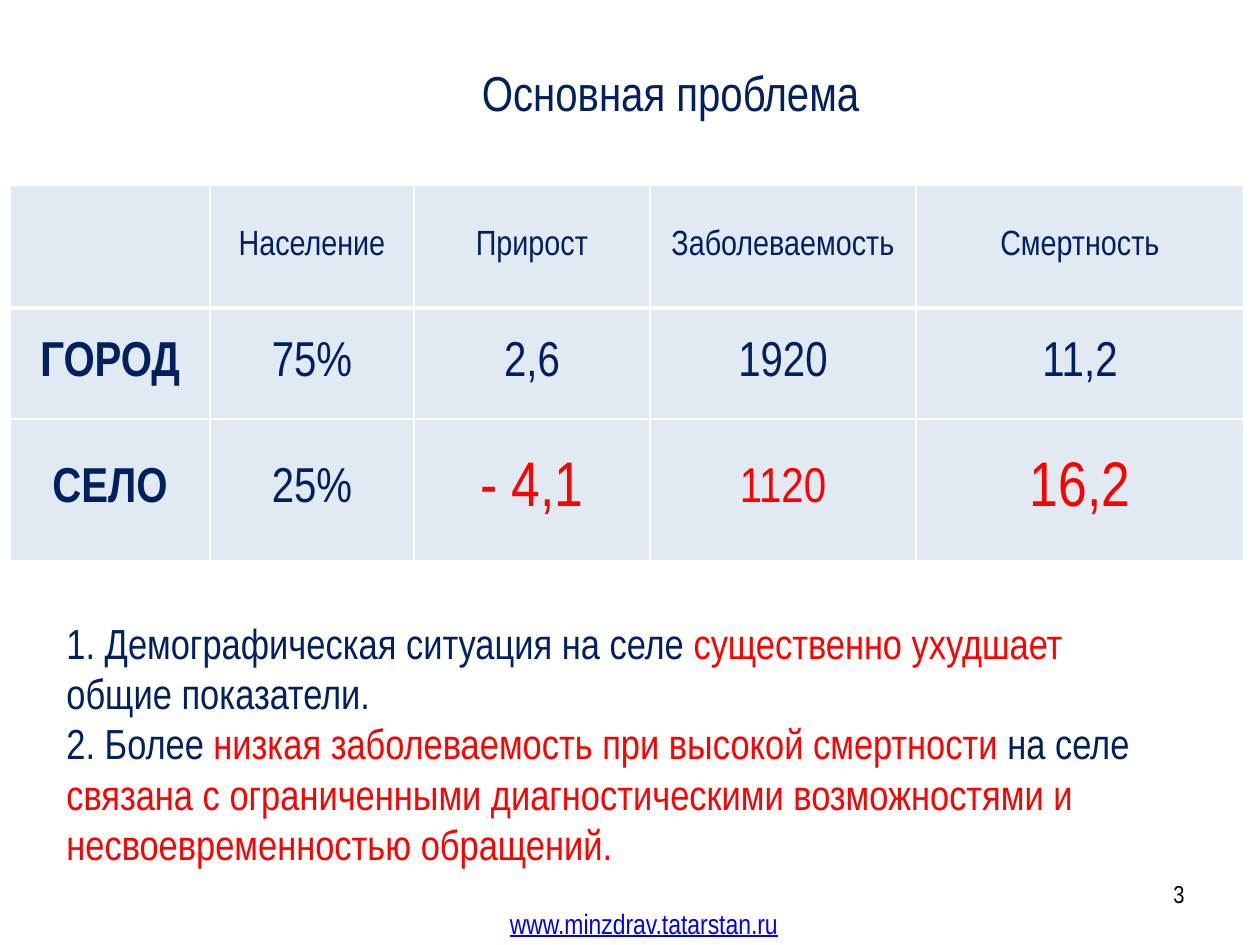
import pptx
import pptx.dml.color
import pptx.enum.text
import pptx.oxml
import pptx.oxml.ns
import pptx.util

PX = 914400 / 126
FONT = "Arial Narrow"
NAVY = pptx.dml.color.RGBColor(0x00, 0x20, 0x60)
RED = pptx.dml.color.RGBColor(0xFF, 0x00, 0x00)
BLACK = pptx.dml.color.RGBColor(0x00, 0x00, 0x00)
LINK_BLUE = pptx.dml.color.RGBColor(0x00, 0x00, 0xFF)
CELL_BLUE = pptx.dml.color.RGBColor(0xDC, 0xE6, 0xF2)
WHITE = pptx.dml.color.RGBColor(0xFF, 0xFF, 0xFF)
CELL_OPACITY = 85
ALIGN = pptx.enum.text.PP_ALIGN
MIDDLE = pptx.enum.text.MSO_ANCHOR.MIDDLE
TOP = pptx.enum.text.MSO_ANCHOR.TOP

TITLE = "Основная проблема"
ROWS = [
    ["", "Население", "Прирост", "Заболеваемость", "Смертность"],
    ["ГОРОД", "75%", "2,6", "1920", "11,2"],
    ["СЕЛО", "25%", "- 4,1", "1120", "16,2"],
]
COLUMN_WIDTHS = [200, 204, 236, 266, 328]
ROW_HEIGHTS = [123, 111, 142]
HIGHLIGHTS = {"- 4,1": 36, "1120": 28, "16,2": 36}
CONCLUSIONS = [
    [("1. Демографическая ситуация на селе ", NAVY),
     ("существенно ухудшает", RED),
     (" общие показатели.", NAVY)],
    [("2. Более ", NAVY),
     ("низкая заболеваемость при высокой смертности ", RED),
     ("на селе ", NAVY),
     ("связана с ограниченными диагностическими возможностями "
      "и несвоевременностью обращений.", RED)],
]
PAGE_NUMBER = "3"
ADDRESS = "www.minzdrav.tatarstan.ru"


def px(*lengths):
    return [pptx.util.Emu(round(length * PX)) for length in lengths]


def write(frame, paragraphs, size, align, anchor=MIDDLE, bold=False):
    """Fill a text frame with paragraphs, each a list of (text, colour)."""
    frame.word_wrap = True
    frame.vertical_anchor = anchor
    for index, spans in enumerate(paragraphs):
        para = frame.paragraphs[0] if index == 0 else frame.add_paragraph()
        para.alignment = align
        for text, colour in spans:
            span = para.add_run()
            span.text = text
            span.font.name = FONT
            span.font.size = pptx.util.Pt(size)
            span.font.bold = bold
            span.font.color.rgb = colour


def add_text(page, place, *content, **options):
    box = page.shapes.add_textbox(*px(*place))
    write(box.text_frame, *content, **options)
    return box


def style_cell(cell, border_widths):
    """Add borders (points per side) and a translucent fill."""
    properties = cell._tc.get_or_add_tcPr()
    for side, width in border_widths.items():
        properties.append(pptx.oxml.parse_xml(
            f'<a:ln{side} {pptx.oxml.ns.nsdecls("a")} w="{pptx.util.Pt(width)}">'
            f'<a:solidFill><a:srgbClr val="{WHITE}"/></a:solidFill></a:ln{side}>'))
    cell.fill.solid()
    cell.fill.fore_color.rgb = CELL_BLUE
    colour = properties.find(pptx.oxml.ns.qn("a:solidFill"))[0]
    colour.append(pptx.oxml.parse_xml(
        f'<a:alpha {pptx.oxml.ns.nsdecls("a")} val="{CELL_OPACITY * 1000}"/>'))


def add_indicators(page):
    place = px(10, 185, sum(COLUMN_WIDTHS), sum(ROW_HEIGHTS))
    table = page.shapes.add_table(len(ROWS), len(COLUMN_WIDTHS), *place).table
    for column, width in zip(table.columns, px(*COLUMN_WIDTHS)):
        column.width = width
    for row, height in zip(table.rows, px(*ROW_HEIGHTS)):
        row.height = height
    for r, texts in enumerate(ROWS):
        for c, text in enumerate(texts):
            cell = table.cell(r, c)
            style_cell(cell, {"L": 1, "R": 1, "T": 3 if r == 1 else 1,
                              "B": 3 if r == 0 else 1})
            cell.vertical_anchor = MIDDLE
            if text:
                size = HIGHLIGHTS.get(text, 20 if r == 0 else 28)
                colour = RED if text in HIGHLIGHTS else NAVY
                write(cell.text_frame, [[(text, colour)]], size, ALIGN.CENTER,
                      bold=c == 0)


def main():
    deck = pptx.Presentation()
    deck.slide_width, deck.slide_height = px(1260, 945)
    page = deck.slides.add_slide(deck.slide_layouts[5])

    title = page.shapes.title
    title.left, title.top, title.width, title.height = px(155, 19, 1031, 146)
    write(title.text_frame, [[(TITLE, NAVY)]], 28, ALIGN.CENTER)

    add_indicators(page)
    add_text(page, (54, 611, 1131, 267), CONCLUSIONS, 24, ALIGN.LEFT, anchor=TOP)
    add_text(page, (1033, 869, 164, 50), [[(PAGE_NUMBER, BLACK)]], 14, ALIGN.RIGHT)
    address = add_text(page, (493, 900, 302, 47), [[(ADDRESS, LINK_BLUE)]], 16,
                       ALIGN.CENTER, anchor=TOP)
    address.text_frame.word_wrap = False
    address.text_frame.paragraphs[0].runs[0].font.underline = True

    deck.save("out.pptx")


if __name__ == "__main__":
    main()
